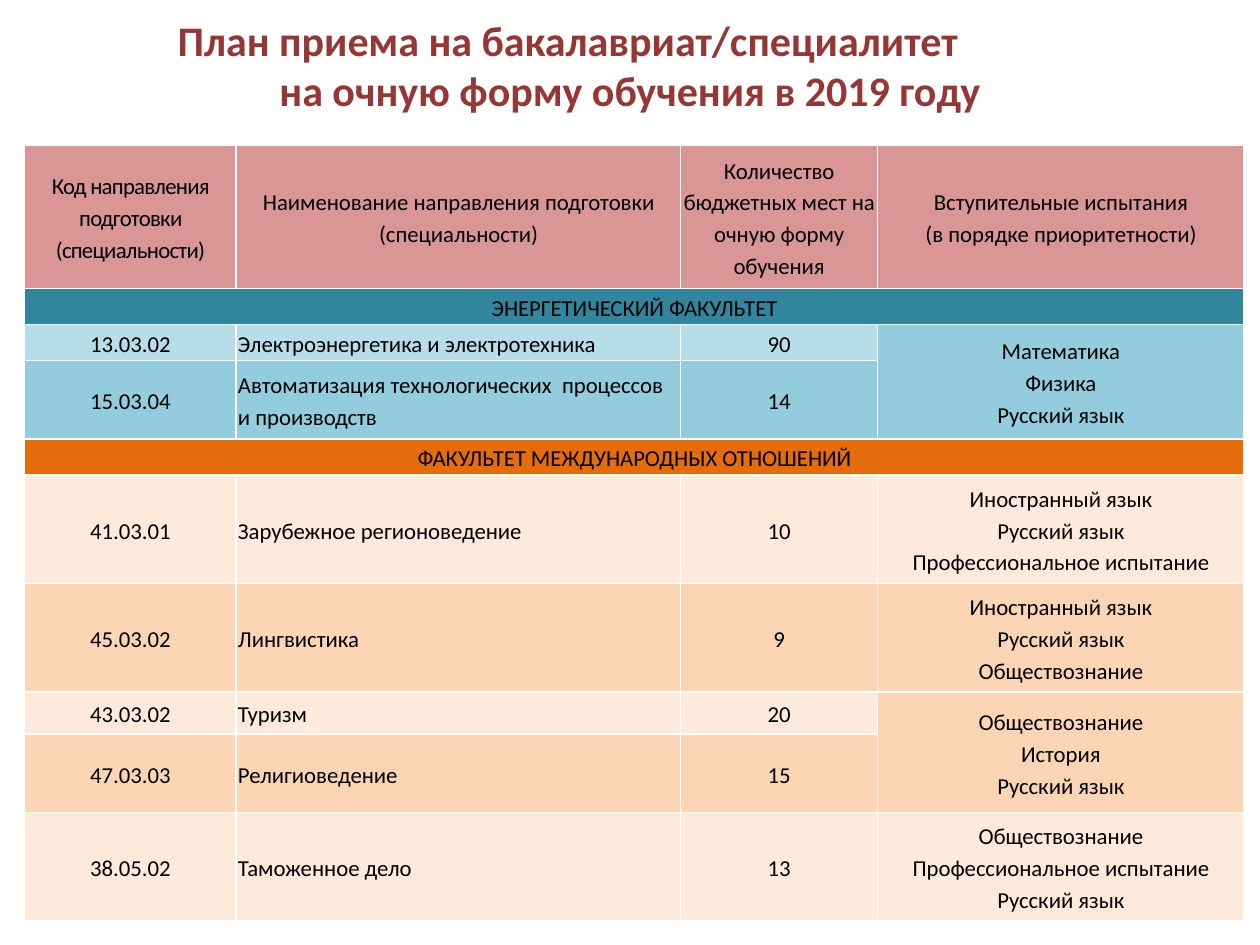
from dataclasses import dataclass
from typing import Any

from lxml import etree
from pptx import Presentation
from pptx.dml.color import RGBColor
from pptx.enum import text
from pptx.oxml import ns
from pptx.util import Pt


@dataclass(frozen=True)
class Theme:
    font: str = "Calibri"
    title_size: float = 24
    table_size: float = 13
    line_spacing: float = 1.15
    title: str = "953735"
    ink: str = "000000"
    border: str = "FFFFFF"
    header: str = "D99694"
    # faculty bar, light row, dark row
    energy: tuple = ("31859C", "B7DEE8", "93CDDD")
    relations: tuple = ("E46C0A", "FDEADA", "FCD5B5")


CENTER, LEFT = text.PP_ALIGN.CENTER, text.PP_ALIGN.LEFT
COLUMN_WIDTHS = [121, 254, 112.5, 209.5]
HEADER_HEIGHT, BAR_HEIGHT = 82, 20.5
HEADERS = [
    "Код направления подготовки (специальности)",
    "Наименование направления подготовки (специальности)",
    "Количество бюджетных мест на очную форму обучения",
    "Вступительные испытания\n(в порядке приоритетности)",
]
# Programmes: height, code, name, places, exams (None: shared with the row above)
ENERGY = [
    (20.5, "13.03.02", "Электроэнергетика и электротехника", "90",
     "Математика\nФизика\nРусский язык"),
    (45, "15.03.04", "Автоматизация технологических  процессов и производств", "14", None),
]
RELATIONS = [
    (62, "41.03.01", "Зарубежное регионоведение", "10",
     "Иностранный язык\nРусский язык\nПрофессиональное испытание"),
    (62, "45.03.02", "Лингвистика", "9",
     "Иностранный язык\nРусский язык\nОбществознание"),
    (24, "43.03.02", "Туризм", "20", "Обществознание\nИстория\nРусский язык"),
    (45, "47.03.03", "Религиоведение", "15", None),
    (62, "38.05.02", "Таможенное дело", "13",
     "Обществознание\nПрофессиональное испытание\nРусский язык"),
]


@dataclass
class SlideBuilder:
    slide: Any
    theme: Theme

    def style(self, paragraph, size, color, bold=False):
        font = paragraph.font
        font.name, font.size, font.bold = self.theme.font, Pt(size), bold
        font.color.rgb = RGBColor.from_string(color)

    def title(self, lines, left, top, width, height, step):
        """Centred lines, each indented by one more step than the line before."""
        shape = self.slide.shapes.add_textbox(Pt(left), Pt(top), Pt(width), Pt(height))
        frame = shape.text_frame
        frame.word_wrap = True
        frame.vertical_anchor = text.MSO_ANCHOR.MIDDLE
        frame.text = "\n".join(lines)
        for index, paragraph in enumerate(frame.paragraphs):
            paragraph.alignment = CENTER
            paragraph._p.get_or_add_pPr().set("marL", str(Pt(index * step)))
            self.style(paragraph, self.theme.title_size, self.theme.title, True)

    def table(self, left, top, widths, heights):
        frame = self.slide.shapes.add_table(
            len(heights), len(widths), Pt(left), Pt(top), Pt(sum(widths)), Pt(sum(heights)))
        table = frame.table
        table.first_row = table.horz_banding = False
        for column, width in zip(table.columns, widths):
            column.width = Pt(width)
        for row, height in zip(table.rows, heights):
            row.height = Pt(height)
            for cell in row.cells:
                self.borders(cell)
        return table

    def borders(self, cell):
        properties = cell._tc.get_or_add_tcPr()
        for side in ("lnL", "lnR", "lnT", "lnB"):
            line = etree.SubElement(properties, ns.qn("a:" + side), w=str(Pt(1)))
            fill = etree.SubElement(line, ns.qn("a:solidFill"))
            etree.SubElement(fill, ns.qn("a:srgbClr"), val=self.theme.border)

    def cell(self, cell, words, fill, alignment=CENTER, tracking=0):
        cell.fill.solid()
        cell.fill.fore_color.rgb = RGBColor.from_string(fill)
        cell.vertical_anchor = text.MSO_ANCHOR.MIDDLE
        cell.margin_left = cell.margin_right = Pt(1)
        cell.margin_top = cell.margin_bottom = 0
        cell.text = words
        for paragraph in cell.text_frame.paragraphs:
            paragraph.alignment = alignment
            paragraph.line_spacing = self.theme.line_spacing
            self.style(paragraph, self.theme.table_size, self.theme.ink)
            if tracking:
                for run in paragraph.runs:
                    run._r.get_or_add_rPr().set("spc", str(round(tracking * 100)))

    def faculty(self, table, start, name, colors, programmes):
        """Fill a faculty bar and its programmes; return the next free row."""
        bar, *shades = colors
        table.cell(start, 0).merge(table.cell(start, 3))
        self.cell(table.cell(start, 0), name, bar)
        for index, (_, code, subject, places, exams) in enumerate(programmes):
            row, shade = start + 1 + index, shades[index % 2]
            self.cell(table.cell(row, 0), code, shade)
            self.cell(table.cell(row, 1), subject, shade, LEFT)
            self.cell(table.cell(row, 2), places, shade)
            if exams is None:
                shared = table.cell(row - 1, 3)
                shared.merge(table.cell(row, 3))
                self.cell(shared, shared.text, shade)
            else:
                self.cell(table.cell(row, 3), exams, shade)
        return start + 1 + len(programmes)


def main():
    presentation = Presentation()
    presentation.slide_width, presentation.slide_height = Pt(720), Pt(540)
    theme = Theme()
    builder = SlideBuilder(
        presentation.slides.add_slide(presentation.slide_layouts[6]), theme)

    builder.title(
        ["План приема на бакалавриат/специалитет", "на очную форму обучения в 2019 году"],
        0, 0, 649, 74, step=71)

    faculties = [
        ("ЭНЕРГЕТИЧЕСКИЙ ФАКУЛЬТЕТ", theme.energy, ENERGY),
        ("ФАКУЛЬТЕТ МЕЖДУНАРОДНЫХ ОТНОШЕНИЙ", theme.relations, RELATIONS),
    ]
    heights = [HEADER_HEIGHT]
    for _, _, programmes in faculties:
        heights += [BAR_HEIGHT] + [programme[0] for programme in programmes]
    table = builder.table(14, 83, COLUMN_WIDTHS, heights)
    for column, words in enumerate(HEADERS):
        builder.cell(table.cell(0, column), words, theme.header,
                     tracking=0 if column else -0.4)
    row = 1
    for name, colors, programmes in faculties:
        row = builder.faculty(table, row, name, colors, programmes)

    presentation.save("out.pptx")


if __name__ == "__main__":
    main()
